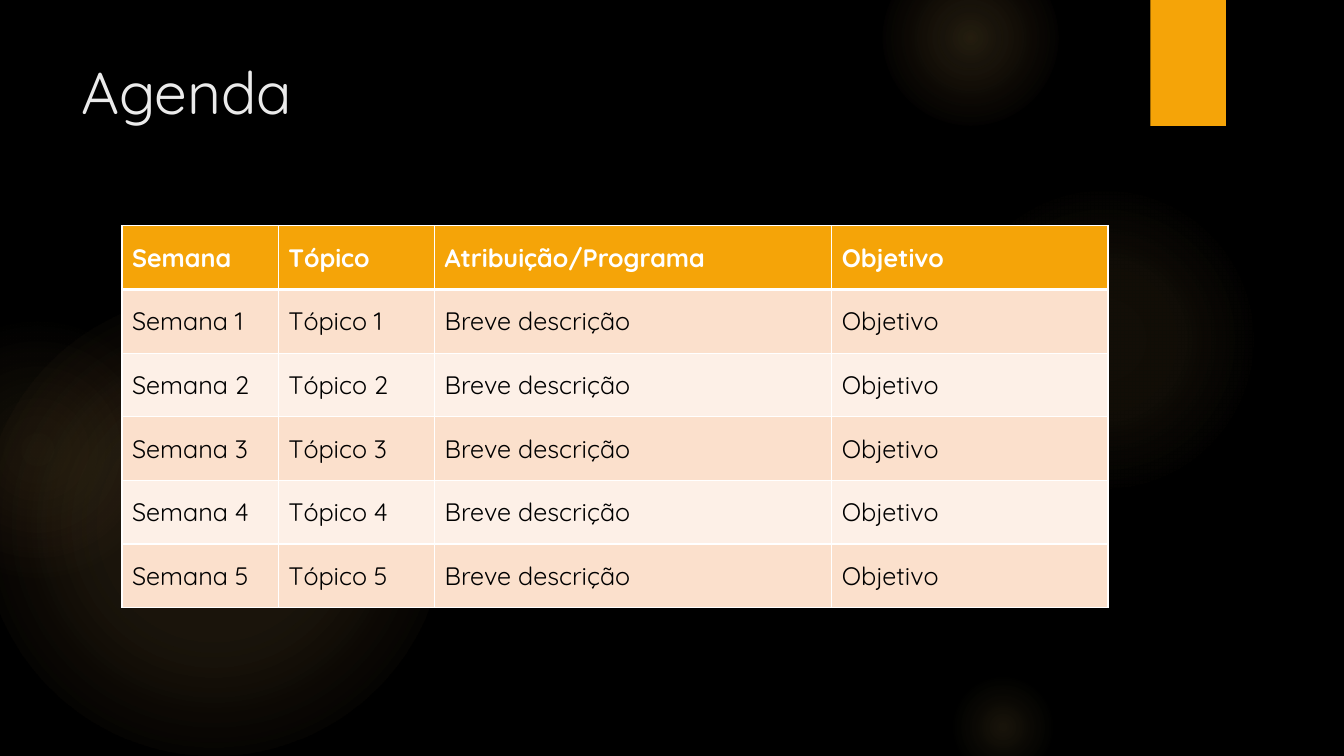
from lxml import etree
from pptx import Presentation
from pptx.dml.color import RGBColor
from pptx.enum.shapes import MSO_SHAPE
from pptx.enum.text import MSO_ANCHOR
from pptx.oxml import parse_xml
from pptx.oxml.ns import nsdecls, qn
from pptx.util import Inches, Pt

OVAL = MSO_SHAPE.OVAL
RECTANGLE = MSO_SHAPE.RECTANGLE
TOP = MSO_ANCHOR.TOP
MIDDLE = MSO_ANCHOR.MIDDLE

FONT = "Quicksand"
BLACK, WHITE, OFF_WHITE = "000000", "FFFFFF", "EBEBEB"
ORANGE, GOLD, CORAL = "F5A408", "FAC96A", "F59B74"
BAND_COLORS = ("FBE0CC", "FDF0E7")


def color(hex_code):
    return RGBColor.from_string(hex_code)


def add_span(frame, text, size, hex_code, bold=False):
    """Put one formatted run into the first paragraph of a text frame."""
    span = frame.paragraphs[0].add_run()
    span.text = text
    span.font.name = FONT
    span.font.size = Pt(size)
    span.font.bold = bold
    span.font.color.rgb = color(hex_code)


deck = Presentation()
deck.slide_width = Inches(13.33)
deck.slide_height = Inches(7.5)
page = deck.slides.add_slide(deck.slide_layouts[6])
page.background.fill.solid()
page.background.fill.fore_color.rgb = color(BLACK)

# Background glows: left, top, diameter, (position %, colour, opacity %)
glows = [
    (-0.17, 2.92, 4.58, [(0, GOLD, 11), (36, GOLD, 10), (75, GOLD, 0)]),
    (-0.92, 3.17, 2.58, [(0, GOLD, 8), (36, GOLD, 5), (71, CORAL, 0)]),
    (9.41, 1.83, 3.08, [(0, GOLD, 7), (36, GOLD, 6), (69, GOLD, 0)]),
    (8.75, -0.5, 1.75, [(0, GOLD, 14), (36, GOLD, 7), (73, GOLD, 0)]),
    (9.41, 6.67, 1.08, [(0, GOLD, 10), (31, GOLD, 5), (66, GOLD, 0)]),
]
for left, top, diameter, stops in glows:
    glow = page.shapes.add_shape(
        OVAL, Inches(left), Inches(top), Inches(diameter), Inches(diameter))
    glow.shadow.inherit = False
    glow.line.fill.background()
    stop_xml = "".join(
        f'<a:gs pos="{position * 1000}"><a:srgbClr val="{hex_code}">'
        f'<a:alpha val="{opacity * 1000}"/></a:srgbClr></a:gs>'
        for position, hex_code, opacity in stops)
    gradient = parse_xml(
        f'<a:gradFill {nsdecls("a")} rotWithShape="1"><a:gsLst>{stop_xml}</a:gsLst>'
        '<a:path path="circle"><a:fillToRect l="50000" t="50000" r="50000" b="50000"/>'
        '</a:path></a:gradFill>')
    glow.element.spPr.find(qn("a:prstGeom")).addnext(gradient)

ribbon = page.shapes.add_shape(
    RECTANGLE, Inches(11.41), Inches(0), Inches(0.75), Inches(1.25))
ribbon.shadow.inherit = False
ribbon.fill.solid()
ribbon.fill.fore_color.rgb = color(ORANGE)
ribbon.line.fill.background()

title_box = page.shapes.add_textbox(
    Inches(0.71), Inches(0.5), Inches(10.29), Inches(1.53))
title_box.text_frame.word_wrap = True
title_box.text_frame.vertical_anchor = TOP
add_span(title_box.text_frame, "Agenda", 42, OFF_WHITE)

agenda = [("Semana", "Tópico", "Atribuição/Programa", "Objetivo")]
agenda += [(f"Semana {week}", f"Tópico {week}", "Breve descrição", "Objetivo")
           for week in range(1, 6)]
column_widths = (1.55, 1.55, 3.94, 2.74)

table = page.shapes.add_table(
    len(agenda), len(column_widths),
    Inches(1.21), Inches(2.24), Inches(9.78), Inches(3.79)).table
for column, width in zip(table.columns, column_widths):
    column.width = Inches(width)

for row_index, entries in enumerate(agenda):
    is_header = row_index == 0
    for column_index, text in enumerate(entries):
        cell = table.cell(row_index, column_index)
        cell.vertical_anchor = MIDDLE
        add_span(cell.text_frame, text, 18, WHITE if is_header else BLACK, is_header)

        # Borders come before the fill in the cell properties
        properties = cell._tc.get_or_add_tcPr()
        for side in ("lnL", "lnR", "lnT", "lnB"):
            thick = (is_header and side == "lnB") or (row_index == 1 and side == "lnT")
            border = etree.SubElement(
                properties, qn(f"a:{side}"), w=str(Pt(3 if thick else 1)))
            paint = etree.SubElement(border, qn("a:solidFill"))
            etree.SubElement(paint, qn("a:srgbClr"), val=WHITE)
        cell.fill.solid()
        cell.fill.fore_color.rgb = color(
            ORANGE if is_header else BAND_COLORS[(row_index - 1) % 2])

deck.save("out.pptx")
